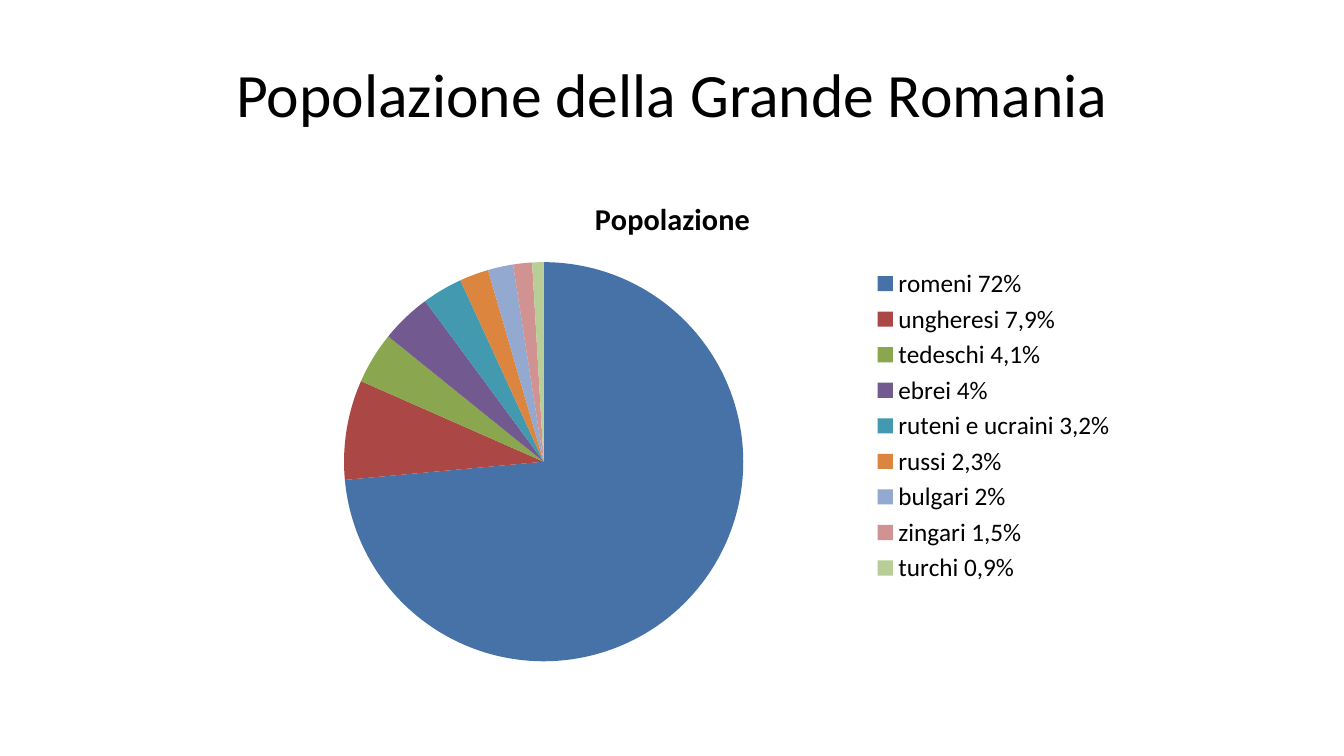
from dataclasses import dataclass

from lxml import etree
from pptx import Presentation
from pptx.chart.data import CategoryChartData
from pptx.dml.color import RGBColor
from pptx.enum import chart as ch, text
from pptx.oxml import ns
from pptx.util import Inches, Pt

TITLE = "Popolazione della Grande Romania"
SERIES = "Popolazione"
GROUPS = [
    ("romeni 72%", 72),
    ("ungheresi 7,9%", 7.9),
    ("tedeschi 4,1%", 4.1),
    ("ebrei 4%", 4),
    ("ruteni e ucraini 3,2%", 3.2),
    ("russi 2,3%", 2.3),
    ("bulgari 2%", 2),
    ("zingari 1,5%", 1.5),
    ("turchi 0,9%", 0.9),
]


@dataclass(frozen=True)
class Theme:
    font: str = "Calibri"
    ink: str = "000000"
    title_size: int = 44
    caption_size: float = 21.6
    legend_size: int = 18
    slices: tuple = ("4672A8", "AB4744", "8AA64F", "725990", "4299B0",
                     "DC853E", "93A9D0", "D19392", "B9CD96")


THEME = Theme()
TITLE_BOX = (0.67, 0.3, 12, 1.25)
CHART_BOX = (2.17, 1.75, 9, 4.95)
PIE_BOX = (3.41, 2.6, 3.96, 3.96)


def style_font(font, size, bold=False):
    font.name = THEME.font
    font.size = Pt(size)
    font.bold = bold
    font.color.rgb = RGBColor.from_string(THEME.ink)


def add_title(slide):
    title = slide.shapes.title
    title.left, title.top, title.width, title.height = map(Inches, TITLE_BOX)
    title.text_frame.text = TITLE
    title.text_frame.vertical_anchor = text.MSO_ANCHOR.MIDDLE
    paragraph = title.text_frame.paragraphs[0]
    paragraph.alignment = text.PP_ALIGN.CENTER
    style_font(paragraph.font, THEME.title_size)


def place_pie(chart):
    """Fix the plot area at PIE_BOX, as fractions of the chart frame."""
    left, top, width, height = CHART_BOX
    x, y, w, h = PIE_BOX
    fractions = {"x": (x - left) / width, "y": (y - top) / height,
                 "w": w / width, "h": h / height}
    plot_area = chart.element.find(".//" + ns.qn("c:plotArea"))
    layout = plot_area.find(ns.qn("c:layout"))
    if layout is None:
        layout = etree.Element(ns.qn("c:layout"))
        plot_area.insert(0, layout)
    manual = etree.SubElement(layout, ns.qn("c:manualLayout"))
    settings = {"layoutTarget": "inner", "xMode": "edge", "yMode": "edge"}
    settings.update({key: f"{value:.3f}" for key, value in fractions.items()})
    for tag, value in settings.items():
        etree.SubElement(manual, ns.qn(f"c:{tag}")).set("val", value)


def add_population_chart(slide):
    names, shares = zip(*GROUPS)
    data = CategoryChartData()
    data.categories = names
    data.add_series(SERIES, shares)
    chart = slide.shapes.add_chart(
        ch.XL_CHART_TYPE.PIE, *map(Inches, CHART_BOX), data).chart
    style_font(chart.font, THEME.legend_size)

    chart.has_title = True
    chart.chart_title.include_in_layout = False
    chart.chart_title.text_frame.text = SERIES
    caption = chart.chart_title.text_frame.paragraphs[0]
    style_font(caption.font, THEME.caption_size, bold=True)

    chart.has_legend = True
    chart.legend.position = ch.XL_LEGEND_POSITION.RIGHT
    chart.legend.include_in_layout = False
    style_font(chart.legend.font, THEME.legend_size)

    pie = chart.plots[0]
    pie.vary_by_categories = True
    for index, color in enumerate(THEME.slices):
        fill = pie.series[0].points[index].format.fill
        fill.solid()
        fill.fore_color.rgb = RGBColor.from_string(color)
    place_pie(chart)


def main():
    deck = Presentation()
    deck.slide_width, deck.slide_height = Inches(13.33), Inches(7.5)
    slide = deck.slides.add_slide(deck.slide_layouts.get_by_name("Title Only"))
    add_title(slide)
    add_population_chart(slide)
    deck.save("out.pptx")


if __name__ == "__main__":
    main()
